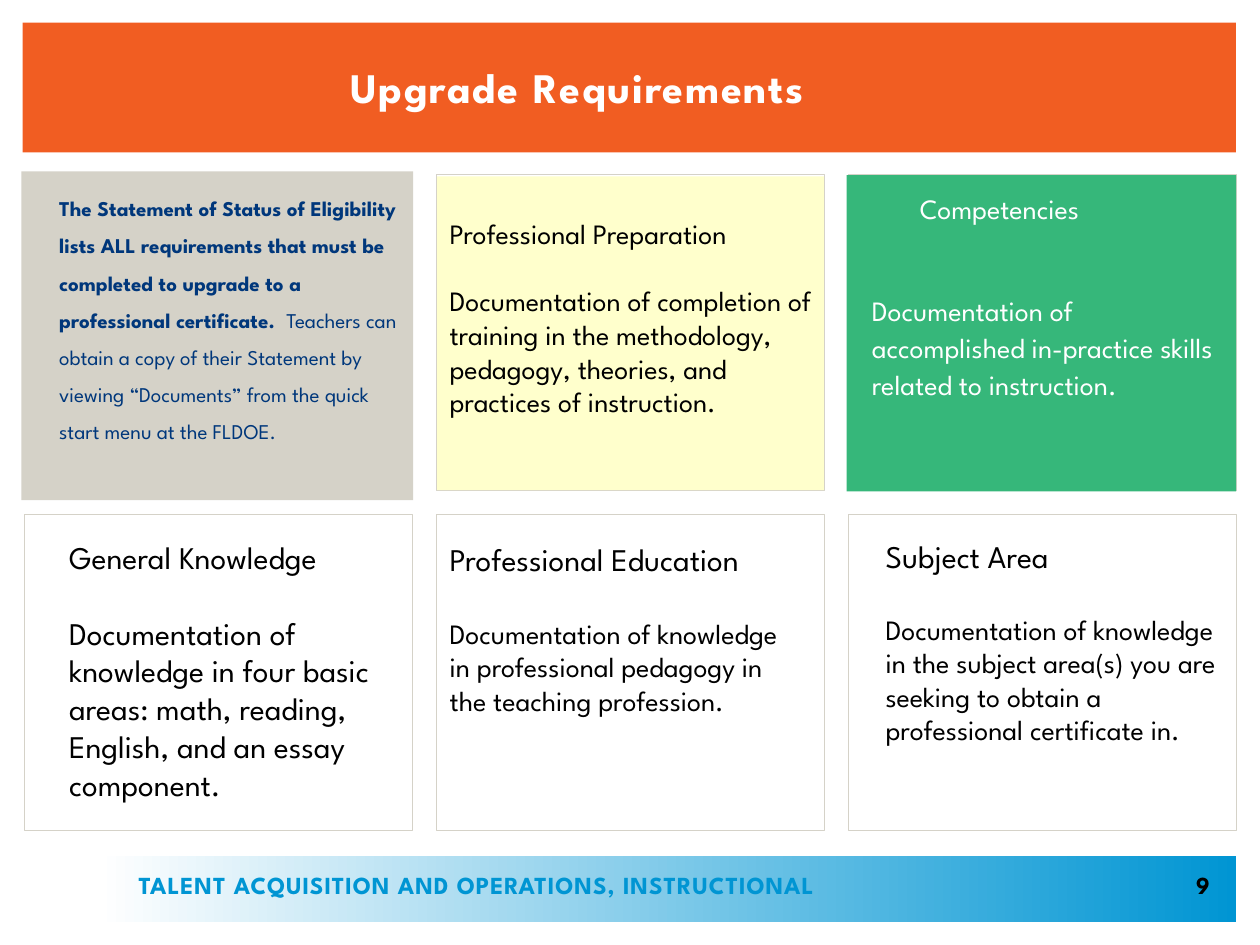
from pptx import Presentation
from pptx.dml.color import RGBColor
from pptx.enum.shapes import MSO_SHAPE
from pptx.enum.text import MSO_ANCHOR, PP_ALIGN
from pptx.util import Pt

EMU_PER_PX = 9144  # 100 px to the inch
FONT = "League Spartan"
ORANGE, BLUE, NAVY, GREEN = "F15D22", "0095D3", "00377B", "36B77A"
SAND, CREAM, WHITE, BLACK = "D5D2C8", "FFFFCC", "FFFFFF", "000000"


def px(length):
    return int(length * EMU_PER_PX)


def color(code):
    return RGBColor.from_string(code)


def add_text(para, text, size=16, ink=BLACK, bold=False, tracking=0):
    span = para.add_run()
    span.text = text
    span.font.name = FONT
    span.font.size = Pt(size)
    span.font.bold = bold
    span.font.color.rgb = color(ink)
    if tracking:
        span.font._element.set("spc", str(int(tracking * 100)))


class SlideBuilder:
    def __init__(self, deck):
        self.page = deck.slides.add_slide(deck.slide_layouts[5])

    def rectangle(self, at, fill=None, line=None):
        box = self.page.shapes.add_shape(MSO_SHAPE.RECTANGLE, *map(px, at))
        box.shadow.inherit = False
        if fill:
            box.fill.solid()
            box.fill.fore_color.rgb = color(fill)
        else:
            box.fill.background()
        if line:
            box.line.color.rgb = color(line)
            box.line.width = Pt(0.25)
        else:
            box.line.fill.background()
        return box

    def gradient_bar(self, at, start, end):
        bar = self.rectangle(at)
        bar.fill.gradient()
        bar.fill.gradient_angle = 0
        for stop, position, code in zip(bar.fill.gradient_stops, (0, 1), (start, end)):
            stop.position = position
            stop.color.rgb = color(code)

    def fill_frame(self, box, paragraphs, inset=(10, 5, 10, 5), anchor=MSO_ANCHOR.TOP,
                   align=PP_ALIGN.LEFT, leading=None, gap=0, indent=0):
        """Each paragraph is a list of (text, format) spans."""
        frame = box.text_frame
        frame.word_wrap = True
        frame.vertical_anchor = anchor
        (frame.margin_left, frame.margin_top,
         frame.margin_right, frame.margin_bottom) = map(px, inset)
        for index, spans in enumerate(paragraphs):
            para = frame.add_paragraph() if index else frame.paragraphs[0]
            para.alignment = align
            para.space_before = Pt(gap if index else 0)
            if leading:
                para.line_spacing = Pt(leading)
            if indent and index == 0:
                para._p.get_or_add_pPr().set("marL", str(px(indent)))
            for text, style in spans:
                add_text(para, text, **style)

    def text_box(self, at, paragraphs, **layout):
        box = self.page.shapes.add_textbox(*map(px, at))
        self.fill_frame(box, paragraphs, **layout)

    def card(self, at, fill, paragraphs, **layout):
        self.fill_frame(self.rectangle(at, fill), paragraphs, **layout)

    def title(self, at, text, **style):
        title = self.page.shapes.title
        title.left, title.top, title.width, title.height = map(px, at)
        self.fill_frame(title, [[(text, style)]], inset=(0, 0, 0, 10),
                        anchor=MSO_ANCHOR.BOTTOM)
        # Bring the title in front of its band
        title.element.getparent().append(title.element)


def main():
    deck = Presentation()
    deck.slide_width, deck.slide_height = px(1000), px(750)
    slide = SlideBuilder(deck)

    # Bands and the grid of frames
    slide.gradient_bar((78, 679, 903, 53), WHITE, BLUE)
    slide.rectangle((18, 18, 963, 103), ORANGE)
    for row in range(2):
        for column in range(3):
            slide.rectangle((19 + 327 * column, 138 + 270 * row, 308, 251), line=SAND)

    slide.title((278, 18, 549, 81), "Upgrade Requirements",
                size=24, ink=WHITE, bold=True, tracking=1)

    # Top row: filled cards
    statement = [
        ("The Statement of Status of Eligibility lists ALL requirements that must be "
         "completed to upgrade to a professional certificate.  ",
         dict(size=12, ink=NAVY, bold=True)),
        ("Teachers can obtain a copy of their Statement by viewing “Documents” from "
         "the quick start menu at the FLDOE.", dict(size=12, ink=NAVY)),
    ]
    slide.card((17, 136, 311, 261), SAND, [statement], inset=(30, 10, 10, 5), leading=21.2)
    slide.card((347, 140, 307, 249), CREAM, [
        [("Professional Preparation", {})],
        [("Documentation of completion of training in the methodology, pedagogy, "
          "theories, and practices of instruction.", {})],
    ], inset=(10, 32, 10, 5), gap=19.2)
    slide.card((672, 139, 309, 251), GREEN, [
        [("Competencies", dict(ink=WHITE))],
        [("Documentation of accomplished in-practice skills related to instruction.",
          dict(ink=WHITE))],
    ], inset=(20, 10, 10, 5), leading=21.2, gap=37.2, indent=38)

    # Bottom row: heading and description
    topics = [
        ((45, 422, 293, 228), "General Knowledge", 18,
         "Documentation of knowledge in four basic areas: math, reading, English, "
         "and an essay component."),
        ((347, 424, 295, 178), "Professional Education", 16,
         "Documentation of knowledge in professional pedagogy in the teaching profession."),
        ((693, 421, 288, 232), "Subject Area", 16,
         "Documentation of knowledge in the subject area(s) you are seeking to obtain "
         "a professional certificate in."),
    ]
    for at, heading, size, description in topics:
        slide.text_box(at, [[(heading, dict(size=18))], [(description, dict(size=size))]],
                       gap=21.6)

    # Footer
    slide.text_box((737, 686, 233, 40), [[("9", dict(size=14, bold=True))]],
                   align=PP_ALIGN.RIGHT)
    slide.text_box((110, 686, 626, 33), [
        [("TALENT ACQUISITION AND OPERATIONS, INSTRUCTIONAL",
          dict(size=14, ink=BLUE, bold=True, tracking=0.5))],
    ], inset=(0, 0, 0, 0), anchor=MSO_ANCHOR.MIDDLE)

    deck.save("out.pptx")


if __name__ == "__main__":
    main()
